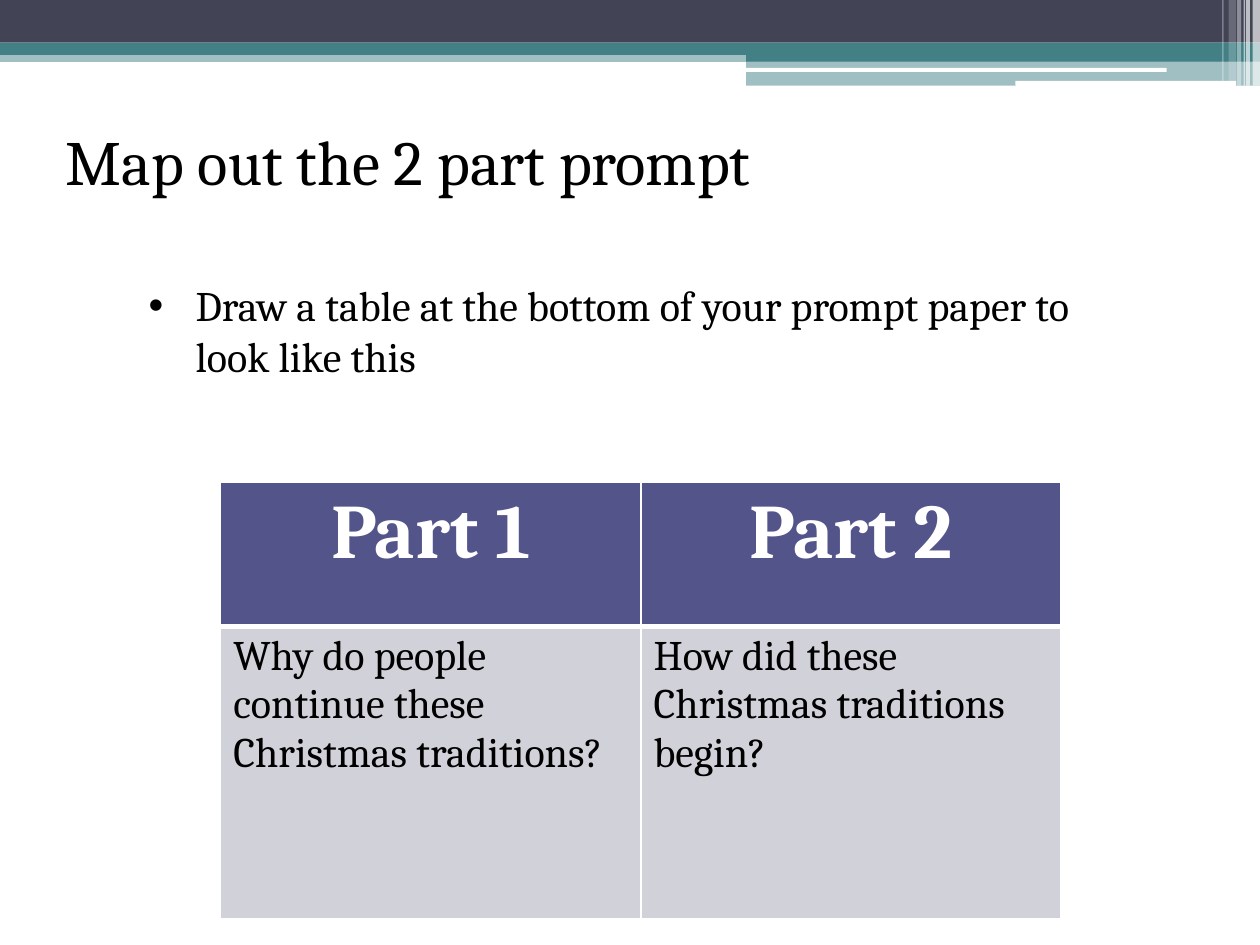
from dataclasses import dataclass

from lxml import etree
from pptx import Presentation
from pptx.dml.color import RGBColor
from pptx.enum.shapes import MSO_SHAPE
from pptx.enum.text import MSO_ANCHOR, MSO_AUTO_SIZE, PP_ALIGN
from pptx.oxml.ns import qn
from pptx.util import Cm, Pt

RECTANGLE = MSO_SHAPE.RECTANGLE
ROUNDED = MSO_SHAPE.ROUNDED_RECTANGLE
TOP = MSO_ANCHOR.TOP
NO_AUTOFIT = MSO_AUTO_SIZE.NONE
LEFT, CENTER = PP_ALIGN.LEFT, PP_ALIGN.CENTER


@dataclass(frozen=True)
class Theme:
    font: str = "Cambria"
    title_size: int = 36
    body_size: int = 24
    header_size: int = 44
    black: str = "000000"
    white: str = "FFFFFF"
    slate: str = "424456"
    teal: str = "438086"
    header_fill: str = "53548A"
    body_fill: str = "D1D1DA"


THEME = Theme()
WIDTH, HEIGHT = 25.4, 19.05

# Banner bands: left, top, width, height, colour, opacity in percent, preset
BANDS = [
    (0, 1.02, WIDTH, 0.23, THEME.teal, 50, RECTANGLE),
    (0, 0, WIDTH, 0.86, THEME.slate, 100, RECTANGLE),
    (0, 0.86, WIDTH, 0.25, THEME.teal, 100, RECTANGLE),
    (15.04, 0.99, 10.36, 0.25, THEME.teal, 100, RECTANGLE),
    (15.04, 1.22, 10.36, 0.51, THEME.teal, 50, RECTANGLE),
    (15.01, 1.37, 8.51, 0.08, THEME.white, 100, ROUNDED),
    (20.47, 1.63, 4.45, 0.1, THEME.white, 100, ROUNDED),
]

# White stripes at the right edge: left, width, height, opacity in percent
STRIPES = [
    (25.25, 0.15, 1.73, 65),
    (25.12, 0.08, 1.73, 65),
    (25.07, 0.03, 1.73, 60),
    (24.94, 0.08, 1.73, 40),
    (24.77, 0.15, 1.63, 20),
    (24.64, 0.03, 1.63, 30),
]

PROMPT_ROWS = [
    ("Part 1", "Part 2"),
    ("Why do people continue these Christmas traditions?",
     "How did these Christmas traditions begin?"),
]


def add_band(slide, left, top, width, height, color, opacity, preset=RECTANGLE):
    shape = slide.shapes.add_shape(preset, Cm(left), Cm(top), Cm(width), Cm(height))
    shape.shadow.inherit = False
    shape.line.fill.background()
    shape.fill.solid()
    shape.fill.fore_color.rgb = RGBColor.from_string(color)
    if opacity < 100:
        color_element = shape.fill._xPr.find(qn("a:solidFill"))[0]
        etree.SubElement(color_element, qn("a:alpha"), val=str(opacity * 1000))


def set_text(text_frame, text, size, color=THEME.black, bold=False, align=LEFT):
    text_frame.text = text
    paragraph = text_frame.paragraphs[0]
    paragraph.alignment = align
    paragraph.space_before = Pt(0)
    font = paragraph.runs[0].font
    font.name, font.size, font.bold = THEME.font, Pt(size), bold
    font.color.rgb = RGBColor.from_string(color)
    return paragraph


def fill_placeholder(placeholder, left, top, width, height, text, size):
    placeholder.left, placeholder.top = Cm(left), Cm(top)
    placeholder.width, placeholder.height = Cm(width), Cm(height)
    text_frame = placeholder.text_frame
    text_frame.word_wrap = True
    text_frame.auto_size = NO_AUTOFIT
    text_frame.vertical_anchor = TOP
    return set_text(text_frame, text, size)


def add_bullet(paragraph, indent):
    properties = paragraph._p.get_or_add_pPr()
    properties.set("marL", str(Cm(indent)))
    properties.set("indent", str(-Cm(indent)))
    etree.SubElement(properties, qn("a:buFont"), typeface="Arial")
    etree.SubElement(properties, qn("a:buChar"), char="•")


def set_borders(cell, widths):
    properties = cell._tc.get_or_add_tcPr()
    for position, (side, width) in enumerate(widths.items()):
        line = etree.Element(qn(f"a:ln{side}"), w=str(Pt(width)))
        fill = etree.SubElement(line, qn("a:solidFill"))
        etree.SubElement(fill, qn("a:srgbClr"), val=THEME.white)
        properties.insert(position, line)


def add_prompt_table(slide):
    column_width, row_heights = 8.47, (2.9, 5.89)
    table = slide.shapes.add_table(
        2, 2, Cm(4.45), Cm(9.73), Cm(2 * column_width), Cm(sum(row_heights))).table
    for column in table.columns:
        column.width = Cm(column_width)
    header_style = (THEME.header_size, THEME.white, True, CENTER)
    body_style = (THEME.body_size, THEME.black, False, LEFT)
    row_looks = [
        (header_style, THEME.header_fill, {"L": 1, "R": 1, "T": 1, "B": 3}),
        (body_style, THEME.body_fill, {"L": 1, "R": 1, "T": 3, "B": 1}),
    ]
    for row, height, texts, look in zip(table.rows, row_heights, PROMPT_ROWS, row_looks):
        row.height = Cm(height)
        style, fill, borders = look
        for cell, text in zip(row.cells, texts):
            set_text(cell.text_frame, text, *style)
            cell.fill.solid()
            cell.fill.fore_color.rgb = RGBColor.from_string(fill)
            set_borders(cell, borders)


def main():
    presentation = Presentation()
    presentation.slide_width, presentation.slide_height = Cm(WIDTH), Cm(HEIGHT)
    slide = presentation.slides.add_slide(presentation.slide_layouts[1])

    # Banner
    for band in BANDS:
        add_band(slide, *band)
    for left, width, height, opacity in STRIPES:
        add_band(slide, left, 0, width, height, THEME.white, opacity)

    # Title and instruction
    fill_placeholder(slide.shapes.title, 1.07, 2.34, 20.12, 1.8,
                     "Map out the 2 part prompt", THEME.title_size)
    instruction = fill_placeholder(
        slide.placeholders[1], 2.74, 5.51, 20.12, 2.31,
        "Draw a table at the bottom of your prompt paper to look like this",
        THEME.body_size)
    add_bullet(instruction, 0.95)

    # Two-part prompt
    add_prompt_table(slide)
    presentation.save("out.pptx")


if __name__ == "__main__":
    main()
